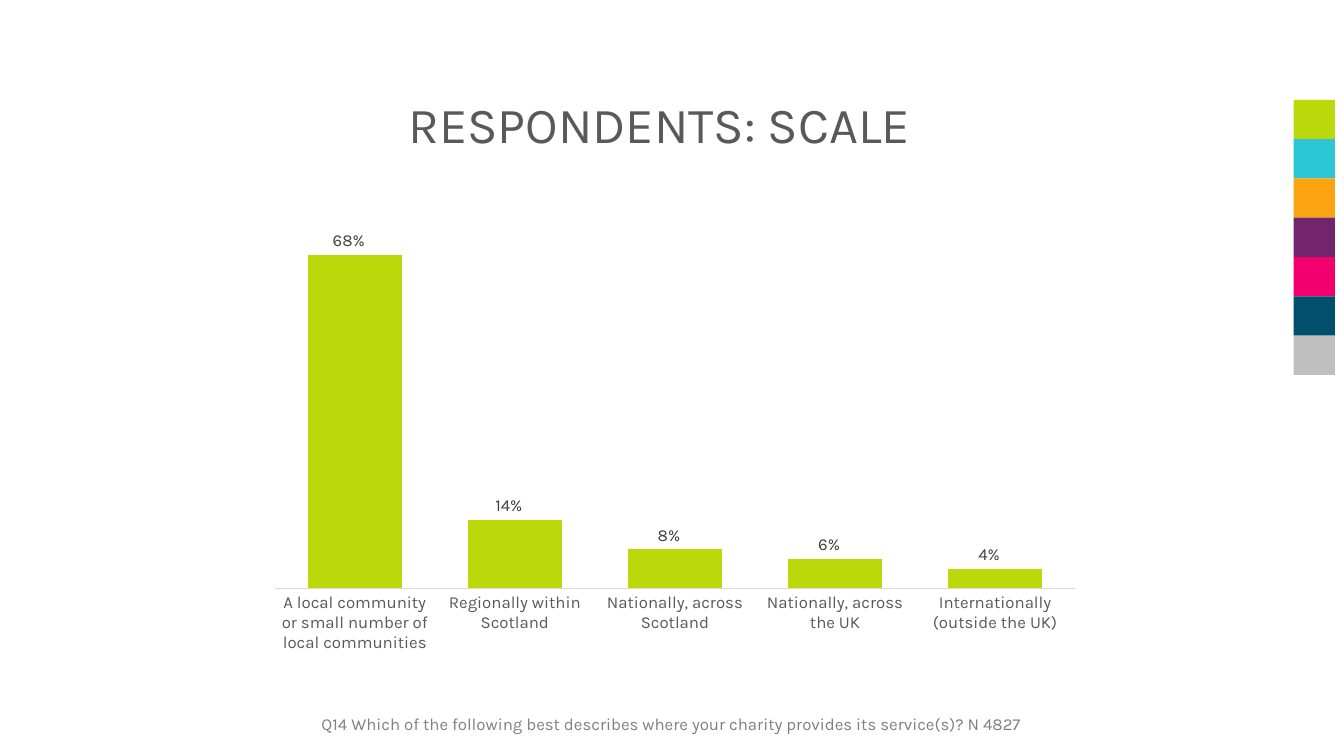
from lxml import etree
from pptx import Presentation
from pptx.chart.data import CategoryChartData
from pptx.dml.color import RGBColor
from pptx.enum.chart import XL_CHART_TYPE, XL_LABEL_POSITION, XL_TICK_MARK
from pptx.enum.shapes import MSO_SHAPE
from pptx.enum.text import MSO_ANCHOR
from pptx.oxml.ns import qn
from pptx.util import Inches, Pt

COLUMN_CHART = XL_CHART_TYPE.COLUMN_CLUSTERED
OUTSIDE_END = XL_LABEL_POSITION.OUTSIDE_END
NO_TICK = XL_TICK_MARK.NONE
RECTANGLE = MSO_SHAPE.RECTANGLE
MIDDLE, TOP = MSO_ANCHOR.MIDDLE, MSO_ANCHOR.TOP

# Content
TITLE = "RESPONDENTS: SCALE"
QUESTION = ("Q14 Which of the following best describes where your charity "
            "provides its service(s)? N 4827")
SCALES = [
    ("A local community or small number of local communities", 0.68),
    ("Regionally within Scotland", 0.14),
    ("Nationally, across Scotland", 0.08),
    ("Nationally, across the UK", 0.06),
    ("Internationally (outside the UK)", 0.04),
]

# Style
FONT = "Karla"
PERCENT = r"0%\ \ \ "  # trailing blanks nudge the labels left
LIME = RGBColor(0xBA, 0xD8, 0x0A)
TITLE_GREY = RGBColor(0x59, 0x59, 0x59)
LABEL_GREY = RGBColor(0x40, 0x40, 0x40)
NOTE_GREY = RGBColor(0x80, 0x80, 0x80)
AXIS_GREY = RGBColor(0xD9, 0xD9, 0xD9)
PALETTE = [
    LIME,
    RGBColor(0x2D, 0xC6, 0xD6),
    RGBColor(0xFC, 0xA3, 0x11),
    RGBColor(0x72, 0x24, 0x6C),
    RGBColor(0xF2, 0x00, 0x6E),
    RGBColor(0x00, 0x4F, 0x6D),
    RGBColor(0xBF, 0xBF, 0xBF),
]

# Layout in inches: left, top, width, height
TITLE_BOX = (3.95, 0.54, 5.49, 1.45)
CHART_BOX = (2.56, 1.85, 8.27, 4.72)
QUESTION_BOX = (3.09, 7.02, 7.21, 0.32)
SWATCH_LEFT, SWATCH_TOP, SWATCH_WIDTH, SWATCH_HEIGHT = 12.83, 0.99, 0.41, 0.39
PLOT_SHARES = {"x": 0.02, "y": 0.02, "w": 0.96, "h": 0.825}  # of the chart


def inches(box):
    return [Inches(length) for length in box]


def style_font(font, size, color):
    font.name, font.size = FONT, Pt(size)
    font.color.rgb = color


def add_text(slide, box, text, size, color, anchor, line_spacing):
    frame = slide.shapes.add_textbox(*inches(box)).text_frame
    frame.word_wrap = True
    frame.vertical_anchor = anchor
    paragraph = frame.paragraphs[0]
    paragraph.text = text
    paragraph.line_spacing = line_spacing
    style_font(paragraph.font, size, color)


def place_plot(chart, shares):
    """Fix the inner plot area as shares of the chart frame."""
    plot_area = chart.plots[0]._element.getparent()
    for old_layout in plot_area.findall(qn("c:layout")):
        plot_area.remove(old_layout)
    layout = etree.Element(qn("c:layout"))
    plot_area.insert(0, layout)
    manual = etree.SubElement(layout, qn("c:manualLayout"))
    settings = [("layoutTarget", "inner"), ("xMode", "edge"), ("yMode", "edge")]
    for tag, value in settings + list(shares.items()):
        etree.SubElement(manual, qn(f"c:{tag}")).set("val", str(value))


def add_scale_chart(slide):
    data = CategoryChartData(number_format=PERCENT)
    data.categories = [name for name, _ in SCALES]
    data.add_series("Series 1", [share for _, share in SCALES])
    chart = slide.shapes.add_chart(COLUMN_CHART, *inches(CHART_BOX), data).chart
    chart.has_legend = chart.has_title = False
    style_font(chart.font, 12, TITLE_GREY)

    # Axes
    category_axis, value_axis = chart.category_axis, chart.value_axis
    category_axis.major_tick_mark = category_axis.minor_tick_mark = NO_TICK
    category_axis.format.line.color.rgb = AXIS_GREY
    category_axis.format.line.width = Pt(0.75)
    style_font(category_axis.tick_labels.font, 12, TITLE_GREY)
    value_axis.minimum_scale, value_axis.maximum_scale = 0, 0.8
    value_axis.has_major_gridlines = False
    value_axis.visible = False

    # Columns and their labels
    plot = chart.plots[0]
    plot.gap_width, plot.overlap = 70, -27
    plot.vary_by_categories = False
    fill = plot.series[0].format.fill
    fill.solid()
    fill.fore_color.rgb = LIME
    plot.has_data_labels = True
    labels = plot.data_labels
    labels.show_value = True
    labels.position = OUTSIDE_END
    labels.number_format, labels.number_format_is_linked = PERCENT, False
    style_font(labels.font, 12, LABEL_GREY)
    place_plot(chart, PLOT_SHARES)


def main():
    presentation = Presentation()
    presentation.slide_width, presentation.slide_height = inches((13.33, 7.5))
    slide = presentation.slides.add_slide(presentation.slide_layouts[6])

    # Colour strip
    for row, color in enumerate(PALETTE):
        top = SWATCH_TOP + row * SWATCH_HEIGHT
        swatch = slide.shapes.add_shape(
            RECTANGLE, *inches((SWATCH_LEFT, top, SWATCH_WIDTH, SWATCH_HEIGHT)))
        swatch.shadow.inherit = False
        swatch.fill.solid()
        swatch.fill.fore_color.rgb = color
        swatch.line.fill.background()

    # Title, chart and survey question
    add_text(slide, TITLE_BOX, TITLE, 36, TITLE_GREY, MIDDLE, 0.9)
    add_scale_chart(slide)
    add_text(slide, QUESTION_BOX, QUESTION, 12, NOTE_GREY, TOP, 1.07)

    presentation.save("out.pptx")


if __name__ == "__main__":
    main()
